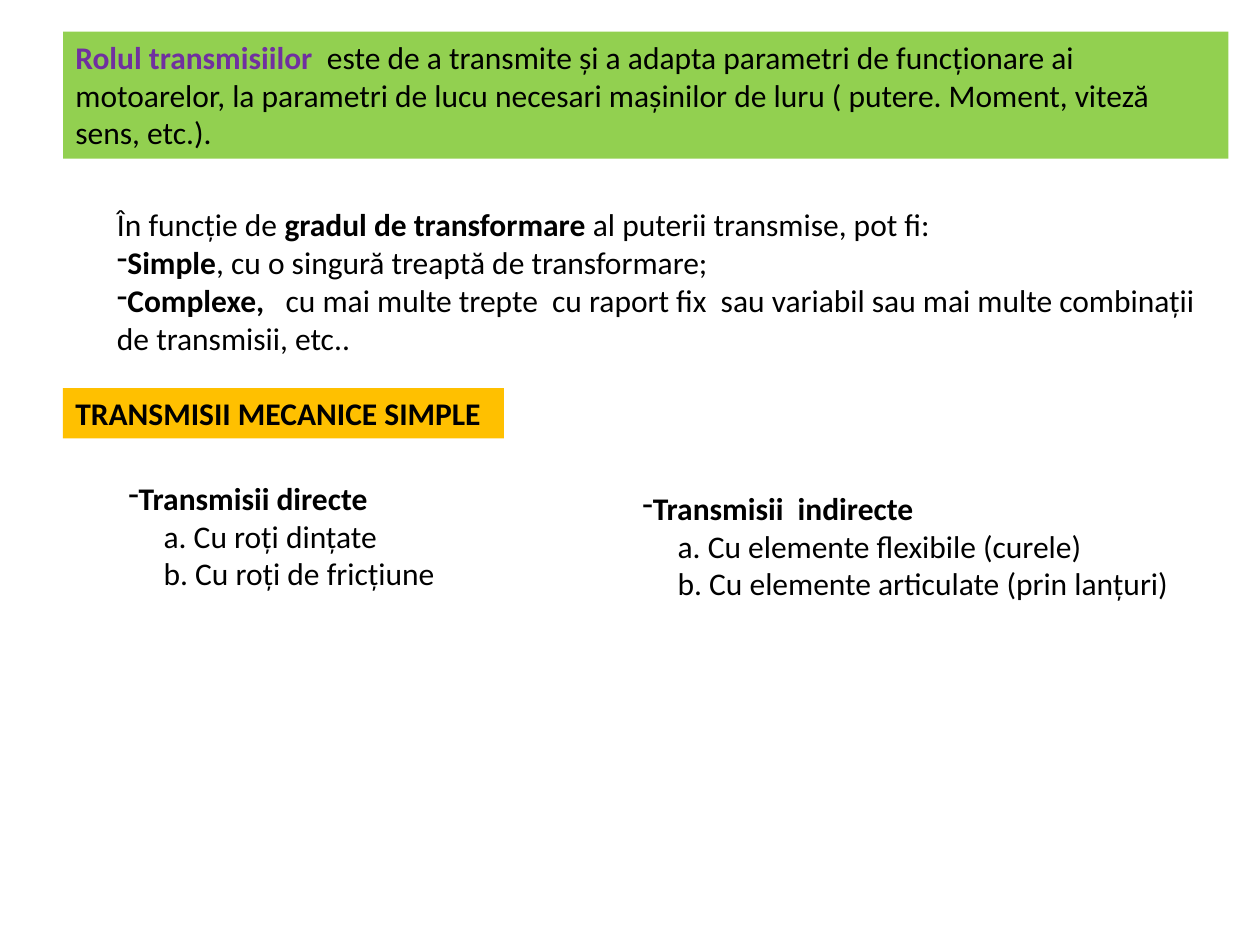
import pptx
import pptx.dml.color
import pptx.enum.text
import pptx.util
from lxml import etree
from pptx.util import Inches

BLACK = "000000"
PURPLE = "7030A0"
GREEN = "92D050"
AMBER = "FFC000"


def rgb(code):
    return pptx.dml.color.RGBColor.from_string(code)


def set_dash(para):
    props = para._p.get_or_add_pPr()
    props.set("marL", "0")
    props.set("indent", "0")
    mark = etree.SubElement(props, pptx.oxml.ns.qn("a:buChar"))
    mark.set("char", "-")


def add_para(para, runs, dash=False, inset=0):
    """Fill a paragraph with runs of (text, bold, colour)."""
    if dash:
        set_dash(para)
    elif inset:
        para._p.get_or_add_pPr().set("marL", str(Inches(inset)))
    para.font.name = "Calibri"
    para.font.size = pptx.util.Pt(18)
    for text, bold, color in runs:
        run = para.add_run()
        run.text = text
        run.font.bold = bold
        run.font.color.rgb = rgb(color)


def add_box(slide, box, fill=None):
    shape = slide.shapes.add_textbox(*map(Inches, box))
    if fill:
        shape.fill.solid()
        shape.fill.fore_color.rgb = rgb(fill)
    frame = shape.text_frame
    frame.word_wrap = True
    frame.auto_size = pptx.enum.text.MSO_AUTO_SIZE.SHAPE_TO_FIT_TEXT
    return frame


def add_banner(slide, box, fill, runs):
    add_para(add_box(slide, box, fill).paragraphs[0], runs)


def add_kinds(slide, box, intro, items):
    """An opening line, then dashed items of a bold term and its meaning."""
    frame = add_box(slide, box)
    add_para(frame.paragraphs[0], intro)
    for term, text in items:
        runs = [(term, True, BLACK), (text, False, BLACK)]
        add_para(frame.add_paragraph(), runs, dash=True)


def add_group(slide, box, title, items):
    """A dashed bold title over indented items."""
    frame = add_box(slide, box)
    add_para(frame.paragraphs[0], [(title, True, BLACK)], dash=True)
    for item in items:
        add_para(frame.add_paragraph(), [(item, False, BLACK)], inset=0.28)


def main():
    deck = pptx.Presentation()
    deck.slide_width, deck.slide_height = Inches(10), Inches(7.5)
    slide = deck.slides.add_slide(deck.slide_layouts[6])

    # Role of transmissions
    add_banner(slide, (0.5, 0.25, 9.25, 1.01), GREEN, [
        ("Rolul transmisiilor  ", True, PURPLE),
        ("este de a transmite și a adapta parametri de funcționare ai "
         "motoarelor, la parametri de lucu necesari mașinilor de luru "
         "( putere. Moment, viteză sens, etc.).", False, BLACK),
    ])

    # Kinds by degree of transformation
    intro = [
        ("În funcție de ", False, BLACK),
        ("gradul de transformare ", True, BLACK),
        ("al puterii transmise, pot fi:", False, BLACK),
    ]
    add_kinds(slide, (0.83, 1.58, 8.92, 1.31), intro, [
        ("Simple", ", cu o singură treaptă de transformare;"),
        ("Complexe,   ", "cu mai multe trepte  cu raport fix  sau variabil "
         "sau mai multe combinații de transmisii, etc.."),
    ])

    # Simple mechanical transmissions
    add_banner(slide, (0.5, 3.08, 3.5, 0.4), AMBER,
               [("TRANSMISII MECANICE SIMPLE", True, BLACK)])
    add_group(slide, (0.92, 3.75, 2.75, 1.01), "Transmisii directe",
              ["a. Cu roți dințate", "b. Cu roți de fricțiune"])
    add_group(slide, (5, 3.83, 4.5, 1.01), "Transmisii  indirecte",
              ["a. Cu elemente flexibile (curele)",
               "b. Cu elemente articulate (prin lanțuri)"])

    deck.save("out.pptx")


if __name__ == "__main__":
    main()
